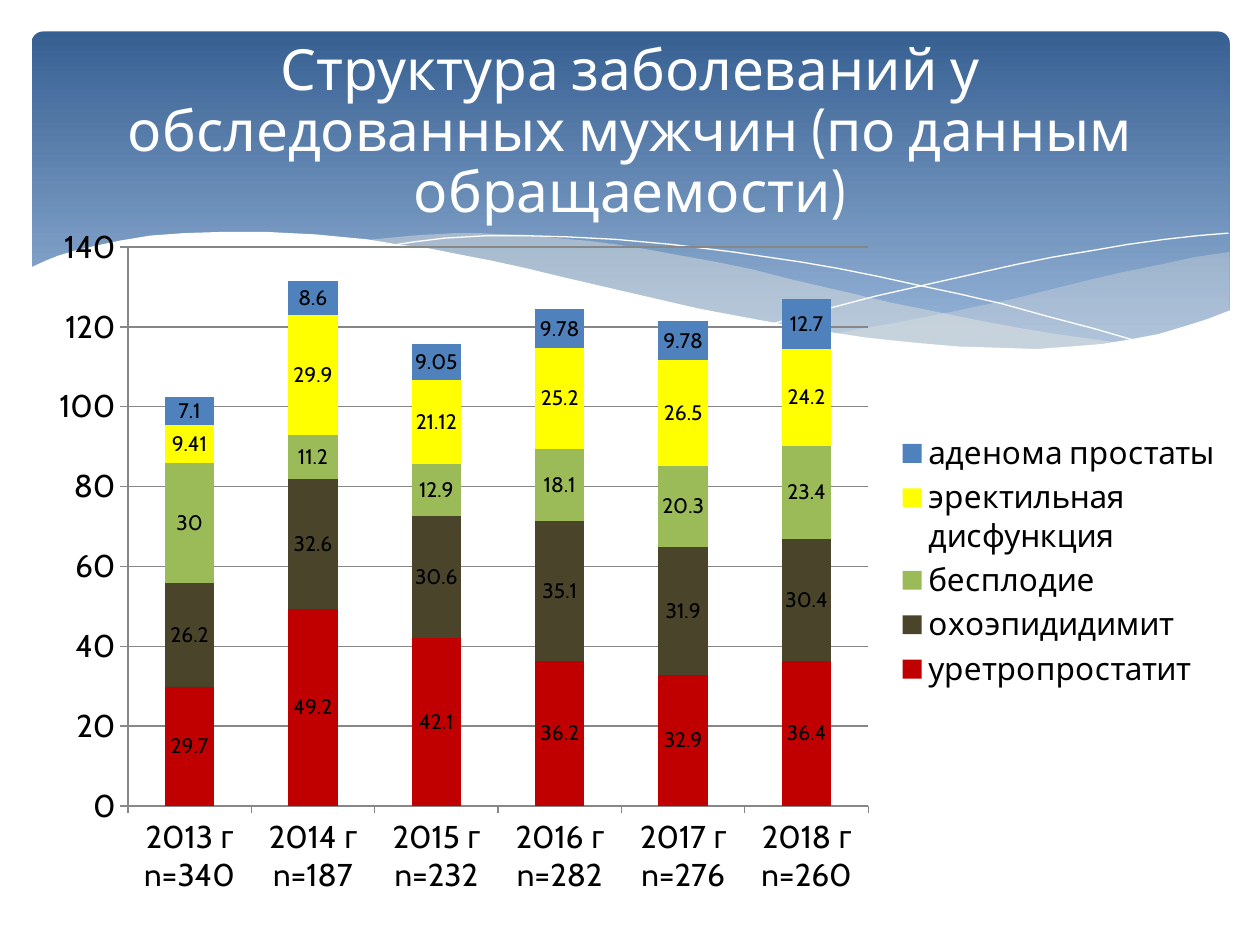
from lxml import etree
from pptx import Presentation
from pptx.chart.data import CategoryChartData
from pptx.dml.color import RGBColor
from pptx.enum.chart import XL_CHART_TYPE, XL_LEGEND_POSITION, XL_TICK_MARK
from pptx.enum.shapes import MSO_SHAPE
from pptx.enum.text import MSO_ANCHOR, PP_ALIGN
from pptx.oxml.ns import qn
from pptx.util import Inches, Pt

COLUMN_STACKED = XL_CHART_TYPE.COLUMN_STACKED
LEGEND_RIGHT = XL_LEGEND_POSITION.RIGHT
TICK_OUTSIDE = XL_TICK_MARK.OUTSIDE
ROUNDED_RECTANGLE = MSO_SHAPE.ROUNDED_RECTANGLE
MIDDLE = MSO_ANCHOR.MIDDLE
CENTER = PP_ALIGN.CENTER
FONT = "Cabin"


def color(hex_string):
    return RGBColor.from_string(hex_string)


def add_outline(slide, points, closed):
    scaled = [(Inches(x), Inches(y)) for x, y in points]
    builder = slide.shapes.build_freeform(*scaled[0])
    builder.add_line_segments(scaled[1:], close=closed)
    shape = builder.convert_to_shape()
    shape.shadow.inherit = False
    return shape


presentation = Presentation()
presentation.slide_width = Inches(10)
presentation.slide_height = Inches(7.5)
slide = presentation.slides.add_slide(presentation.slide_layouts[6])

# Gradient banner
banner = slide.shapes.add_shape(
    ROUNDED_RECTANGLE, Inches(0.25), Inches(0.25), Inches(9.51), Inches(2.7))
banner.adjustments[0] = 0.034
banner.shadow.inherit = False
banner.line.fill.background()
banner.fill.gradient()
banner.fill.gradient_angle = 270
for stop, position, shade in zip(
        banner.fill.gradient_stops, (0, 0.9), ("376092", "95B3D7")):
    stop.position = position
    stop.color.rgb = color(shade)

# Waves over the lower edge of the banner: fill, opacity in percent, outline
right_wave = [
    (9.76, 2), (9.48, 2.04), (9.21, 2.1), (8.91, 2.16), (8.61, 2.23),
    (8.05, 2.37), (7.53, 2.48), (7.06, 2.57), (6.61, 2.65), (6.91, 2.69),
    (7.19, 2.72), (7.45, 2.75), (7.69, 2.77), (8.03, 2.78), (8.35, 2.77),
    (8.63, 2.75), (8.89, 2.72), (9.13, 2.67), (9.35, 2.62), (9.49, 2.57),
    (9.63, 2.52), (9.76, 2.47)]
middle_wave = [
    (8.93, 2.73), (8.66, 2.69), (8.37, 2.65), (8.07, 2.6), (7.75, 2.54),
    (7.41, 2.47), (7.06, 2.4), (6.68, 2.31), (6.29, 2.22), (5.98, 2.14),
    (5.69, 2.08), (5.41, 2.03), (5.14, 1.98), (4.89, 1.94), (4.65, 1.91),
    (4.42, 1.89), (4.2, 1.87), (3.99, 1.86), (3.8, 1.85), (3.61, 1.85),
    (3.28, 1.87), (2.86, 1.91), (3.23, 1.96), (3.62, 2.03), (4.04, 2.11),
    (4.49, 2.22), (4.91, 2.32), (5.3, 2.4), (5.66, 2.48), (6.01, 2.55),
    (6.34, 2.61), (6.65, 2.66), (6.95, 2.7), (7.22, 2.74), (7.48, 2.76),
    (7.73, 2.77), (7.96, 2.78), (8.28, 2.78), (8.57, 2.77), (8.76, 2.75)]
white_wave = [
    (9.77, 2.46), (9.59, 2.53), (9.4, 2.59), (9.2, 2.65), (8.99, 2.69),
    (8.75, 2.73), (8.5, 2.75), (8.23, 2.77), (7.93, 2.76), (7.61, 2.75),
    (7.26, 2.72), (6.88, 2.68), (6.48, 2.62), (6.03, 2.54), (5.55, 2.45),
    (5.03, 2.33), (4.47, 2.2), (4.18, 2.13), (3.91, 2.07), (3.65, 2.02),
    (3.4, 1.97), (3.16, 1.94), (2.92, 1.9), (2.71, 1.88), (2.5, 1.86),
    (2.3, 1.85), (2.11, 1.84), (1.77, 1.84), (1.46, 1.85), (1.19, 1.87),
    (0.95, 1.91), (0.76, 1.95), (0.59, 1.99), (0.46, 2.03), (0.36, 2.07),
    (0.23, 2.13), (0.23, 3.29), (9.77, 3.29)]
falling_line = [
    (3.09, 1.95), (3.28, 1.92), (3.53, 1.89), (3.87, 1.87), (4.16, 1.87),
    (4.5, 1.88), (4.89, 1.9), (5.33, 1.94), (5.82, 2), (6.36, 2.08),
    (6.65, 2.13), (6.95, 2.19), (7.27, 2.26), (7.6, 2.33), (7.95, 2.41),
    (8.31, 2.51), (8.69, 2.61), (9.07, 2.72)]
rising_line = [
    (6.13, 2.57), (6.53, 2.46), (6.95, 2.35), (7.48, 2.23), (8.06, 2.1),
    (8.36, 2.04), (8.66, 1.99), (8.95, 1.94), (9.24, 1.9), (9.51, 1.87),
    (9.75, 1.85)]

for fill, opacity, points in (
        ("EEECE1", 29, right_wave), ("EEECE1", 40, middle_wave),
        (None, 100, falling_line), (None, 100, rising_line),
        ("FFFFFF", 100, white_wave)):
    wave = add_outline(slide, points, closed=fill is not None)
    if fill is None:
        wave.fill.background()
        wave.line.color.rgb = color("FFFFFF")
        wave.line.width = Pt(0)
        continue
    wave.line.fill.background()
    wave.fill.solid()
    wave.fill.fore_color.rgb = color(fill)
    if opacity < 100:
        fill_color = next(wave.fill._xPr.iter(qn("a:srgbClr")))
        etree.SubElement(fill_color, qn("a:alpha"), val=str(opacity * 1000))

# Stacked column chart
series_rows = [
    ("уретропростатит", "C00000", (29.7, 49.2, 42.1, 36.2, 32.9, 36.4)),
    ("охоэпидидимит", "4A452A", (26.2, 32.6, 30.6, 35.1, 31.9, 30.4)),
    ("бесплодие", "9BBB59", (30, 11.2, 12.9, 18.1, 20.3, 23.4)),
    ("эректильная дисфункция", "FFFF00", (9.41, 29.9, 21.12, 25.2, 26.5, 24.2)),
    ("аденома простаты", "4F81BD", (7.1, 8.6, 9.05, 9.78, 9.78, 12.7)),
]
chart_data = CategoryChartData()
chart_data.categories = [
    f"{year} г n={count}"
    for year, count in enumerate((340, 187, 232, 282, 276, 260), start=2013)]
for name, _, values in series_rows:
    chart_data.add_series(name, values)

chart = slide.shapes.add_chart(
    COLUMN_STACKED, Inches(0.28), Inches(1.7), Inches(9.53), Inches(5.51),
    chart_data).chart
chart.has_title = False
chart.font.name = FONT
chart.font.size = Pt(18)
chart.font.color.rgb = color("000000")
chart.has_legend = True
chart.legend.position = LEGEND_RIGHT
chart.legend.include_in_layout = False

plot = chart.plots[0]
plot.gap_width = 150
plot.overlap = 100
plot.vary_by_categories = False
for series, (_, fill, _) in zip(plot.series, series_rows):
    series.format.fill.solid()
    series.format.fill.fore_color.rgb = color(fill)
    labels = series.data_labels
    labels.show_value = True
    labels.font.size = Pt(12)
    labels.font.name = FONT
    labels.font.color.rgb = color("000000")

value_axis = chart.value_axis
value_axis.minimum_scale = 0
value_axis.maximum_scale = 140
value_axis.major_unit = 20
value_axis.has_major_gridlines = True
value_axis.major_gridlines.format.line.color.rgb = color("878787")
for axis in (chart.category_axis, value_axis):
    axis.major_tick_mark = TICK_OUTSIDE
    axis.format.line.color.rgb = color("878787")

# Title
title = slide.shapes.add_textbox(Inches(0.5), Inches(0.37), Inches(9), Inches(1.37))
title.text_frame.word_wrap = True
title.text_frame.vertical_anchor = MIDDLE
paragraph = title.text_frame.paragraphs[0]
paragraph.text = "Структура заболеваний у обследованных мужчин (по данным обращаемости)"
paragraph.alignment = CENTER
paragraph.line_spacing = 0.9
paragraph.font.name = FONT
paragraph.font.size = Pt(32.4)
paragraph.font.color.rgb = color("FFFFFF")

presentation.save("out.pptx")
